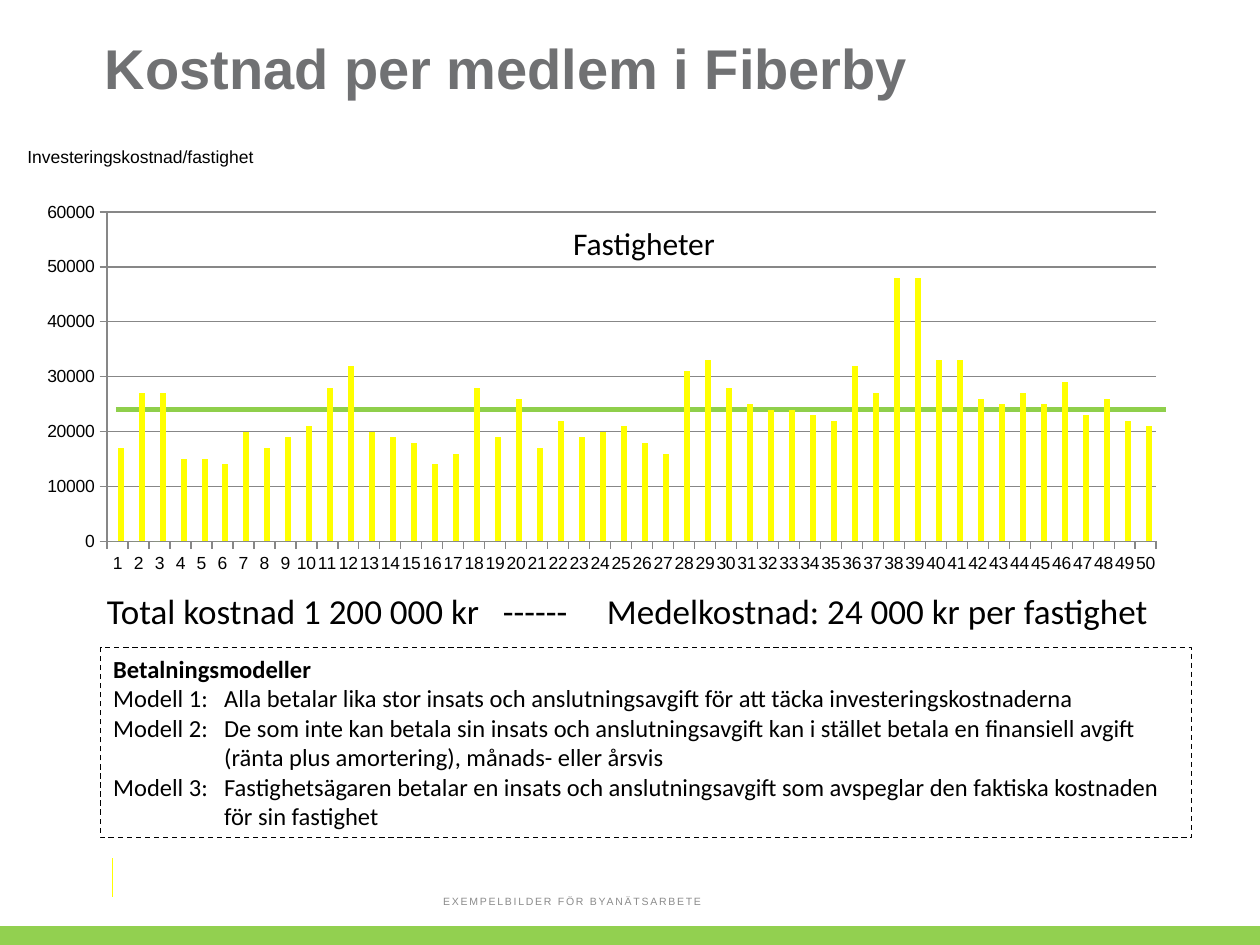
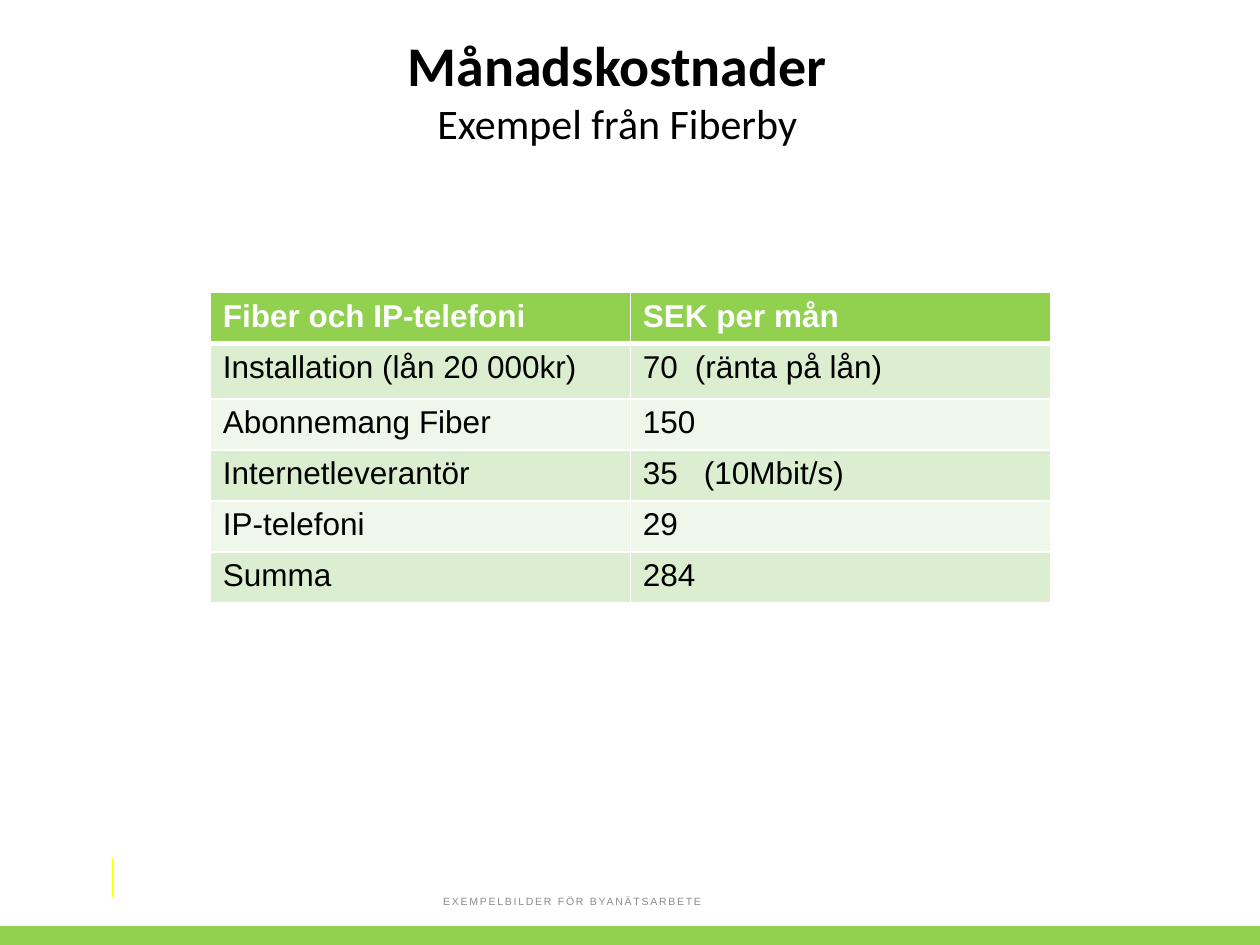
from dataclasses import dataclass

from lxml import etree
from pptx import Presentation
from pptx.chart.data import CategoryChartData
from pptx.dml.color import RGBColor
from pptx.enum.chart import XL_CHART_TYPE, XL_TICK_MARK
from pptx.enum.dml import MSO_LINE
from pptx.enum.shapes import MSO_CONNECTOR, MSO_SHAPE
from pptx.enum.text import MSO_ANCHOR, MSO_AUTO_SIZE, PP_ALIGN
from pptx.oxml import parse_xml
from pptx.oxml.ns import nsdecls, qn
from pptx.util import Pt

STRAIGHT = MSO_CONNECTOR.STRAIGHT
RECTANGLE = MSO_SHAPE.RECTANGLE
COLUMNS = XL_CHART_TYPE.COLUMN_CLUSTERED
TICK_OUTSIDE = XL_TICK_MARK.OUTSIDE
DASH = MSO_LINE.DASH
LEFT, CENTER = PP_ALIGN.LEFT, PP_ALIGN.CENTER
TOP, MIDDLE = MSO_ANCHOR.TOP, MSO_ANCHOR.MIDDLE
NO_AUTOSIZE = MSO_AUTO_SIZE.NONE


@dataclass
class Theme:
    black = RGBColor(0x00, 0x00, 0x00)
    white = RGBColor(0xFF, 0xFF, 0xFF)
    green = RGBColor(0x92, 0xD0, 0x50)
    average_green = RGBColor(0x8F, 0xCF, 0x4B)
    row_dark = RGBColor(0xDC, 0xEE, 0xD0)
    row_light = RGBColor(0xEE, 0xF7, 0xE9)
    yellow = RGBColor(0xFF, 0xFF, 0x00)
    title_gray = RGBColor(0x70, 0x71, 0x73)
    footer_gray = RGBColor(0x8C, 0x8C, 0x8C)
    axis_gray = RGBColor(0x87, 0x87, 0x87)
    sans = "Arial"
    body = "Calibri"
    title_size = Pt(32)
    subtitle_size = Pt(24)
    summary_size = Pt(20)
    table_size = Pt(18)
    model_size = Pt(14)
    label_size = Pt(10)
    footer_size = Pt(6)


theme = Theme()


def add_run(paragraph, text, size, font=theme.body, color=theme.black, bold=False):
    run = paragraph.add_run()
    run.text = text
    run.font.size = size
    run.font.name = font
    run.font.color.rgb = color
    run.font.bold = bold
    return run


def add_tabs(paragraph, *stops):
    tab_list = etree.SubElement(paragraph._p.get_or_add_pPr(), qn("a:tabLst"))
    for stop in stops:
        etree.SubElement(tab_list, qn("a:tab"), pos=str(Pt(stop)), algn="l")


presentation = Presentation()
presentation.slide_width = Pt(720)
presentation.slide_height = Pt(540)
title_only = presentation.slide_layouts[5]
cost_slide = presentation.slides.add_slide(title_only)
monthly_slide = presentation.slides.add_slide(title_only)

average_line = cost_slide.shapes.add_connector(
    STRAIGHT, Pt(66.2), Pt(234), Pt(666), Pt(234))
average_line.line.color.rgb = theme.average_green
average_line.line.width = Pt(3)
connectors = [average_line]

for slide in (cost_slide, monthly_slide):
    marker = slide.shapes.add_connector(
        STRAIGHT, Pt(64), Pt(490.3), Pt(64), Pt(512.6))
    marker.line.color.rgb = theme.yellow
    marker.line.width = Pt(0.5)
    connectors.append(marker)

    band = slide.shapes.add_shape(RECTANGLE, Pt(0), Pt(529.2), Pt(720), Pt(10.8))
    band.shadow.inherit = False
    band.fill.solid()
    band.fill.fore_color.rgb = theme.green
    band.line.fill.background()

    footer = slide.shapes.add_textbox(Pt(246.2), Pt(500.4), Pt(228.2), Pt(28.8))
    footer.text_frame.word_wrap = True
    footer.text_frame.vertical_anchor = MIDDLE
    footer_run = add_run(footer.text_frame.paragraphs[0], "EXEMPELBILDER FÖR BYANÄTSARBETE",
                         theme.footer_size, theme.sans, theme.footer_gray)
    footer_run._r.get_or_add_rPr().set("spc", "100")

    slide.shapes.title.text_frame.auto_size = NO_AUTOSIZE
    slide.shapes.title.text_frame.vertical_anchor = TOP

for connector in connectors:
    etree.SubElement(connector._element.spPr, qn("a:effectLst"))

title = cost_slide.shapes.title
title.left, title.top, title.width, title.height = Pt(52.6), Pt(18), Pt(607.7), Pt(90)
paragraph = title.text_frame.paragraphs[0]
paragraph.alignment = LEFT
paragraph.line_spacing = Pt(36)
add_run(paragraph, "Kostnad per medlem i Fiberby",
        theme.title_size, theme.sans, theme.title_gray, True)

thousand_kronor = [
    17, 27, 27, 15, 15, 14, 20, 17, 19, 21, 28, 32, 20, 19, 18, 14, 16,
    28, 19, 26, 17, 22, 19, 20, 21, 18, 16, 31, 33, 28, 25, 24, 24, 23,
    22, 32, 27, 48, 48, 33, 33, 26, 25, 27, 25, 29, 23, 26, 22, 21,
]
property_count = len(thousand_kronor)
chart_data = CategoryChartData(number_format="General")
chart_data.categories = [str(number + 1) for number in range(property_count)]
chart_data.add_series("Series 1", [0] * property_count)
chart_data.add_series("Series 2", [cost * 1000 for cost in thousand_kronor])
chart = cost_slide.shapes.add_chart(
    COLUMNS, Pt(23.8), Pt(108), Pt(655.9), Pt(231.8), chart_data).chart
chart.has_legend = False
chart.has_title = False
chart.font.size = theme.label_size
chart.font.name = theme.sans
chart.font.color.rgb = theme.black
plot = chart.plots[0]
plot.gap_width = 150
plot.vary_by_categories = False
for series, color in zip(plot.series, (theme.green, theme.yellow)):
    series.format.fill.solid()
    series.format.fill.fore_color.rgb = color

value_axis = chart.value_axis
value_axis.minimum_scale = 0
value_axis.maximum_scale = 60000
value_axis.major_unit = 10000
value_axis.has_major_gridlines = True
category_axis = chart.category_axis
for axis in (value_axis, category_axis):
    axis.major_tick_mark = TICK_OUTSIDE
    axis.tick_labels.font.size = theme.label_size
for line in (value_axis.format.line, category_axis.format.line,
             value_axis.major_gridlines.format.line):
    line.color.rgb = theme.axis_gray
    line.width = Pt(0.75)

category_element = category_axis._element
label_body = category_element.find(qn("c:txPr")).find(qn("a:bodyPr"))
label_body.set("rot", "0")
label_body.set("vert", "horz")
category_element.find(qn("c:noMultiLvlLbl")).addprevious(
    parse_xml(f'<c:tickLblSkip {nsdecls("c")} val="1"/>'))

chart_element = chart._chartSpace.find(qn("c:chart"))
plot_area = chart_element.find(qn("c:plotArea"))
for layout in plot_area.findall(qn("c:layout")):
    plot_area.remove(layout)
plot_area.insert(0, parse_xml(
    f'<c:layout {nsdecls("c")}><c:manualLayout><c:layoutTarget val="inner"/>'
    '<c:xMode val="edge"/><c:yMode val="edge"/><c:x val="0.057"/><c:y val="0.057"/>'
    '<c:w val="0.914"/><c:h val="0.812"/></c:manualLayout></c:layout>'))
no_fill = f'<c:spPr {nsdecls("c", "a")}><a:noFill/><a:ln><a:noFill/></a:ln></c:spPr>'
plot_area.append(parse_xml(no_fill))
chart_element.addnext(parse_xml(no_fill))

chart_labels = [
    ("Total kostnad 1 200 000 kr\t------\tMedelkostnad: 24 000 kr per fastighet",
     54, 333.4, 635, 31.7, theme.summary_size, theme.body, (226.3, 285.7)),
    ("Fastigheter", 320.4, 124.6, 96.5, 28.8, theme.table_size, theme.body, ()),
    ("Investeringskostnad/fastighet", 8.6, 79.9, 164.2, 19.4,
     theme.label_size, theme.sans, ()),
]
for text, left, top, width, height, size, font, stops in chart_labels:
    label = cost_slide.shapes.add_textbox(Pt(left), Pt(top), Pt(width), Pt(height))
    label.text_frame.word_wrap = True
    paragraph = label.text_frame.paragraphs[0]
    if stops:
        add_tabs(paragraph, *stops)
    add_run(paragraph, text, size, font)

model_box = cost_slide.shapes.add_shape(
    RECTANGLE, Pt(57.6), Pt(370.1), Pt(623.5), Pt(108.7))
model_box.shadow.inherit = False
model_box.fill.background()
model_box.line.color.rgb = theme.black
model_box.line.width = Pt(0.75)
model_box.line.dash_style = DASH
model_frame = model_box.text_frame
model_frame.word_wrap = True
model_frame.vertical_anchor = TOP
paragraph = model_frame.paragraphs[0]
paragraph.alignment = LEFT
add_run(paragraph, "Betalningsmodeller", theme.model_size, bold=True)
payment_models = [
    "Alla betalar lika stor insats och anslutningsavgift för att täcka investeringskostnaderna",
    "De som inte kan betala sin insats och anslutningsavgift kan i stället betala "
    "en finansiell avgift (ränta plus amortering), månads- eller årsvis",
    "Fastighetsägaren betalar en insats och anslutningsavgift som avspeglar "
    "den faktiska kostnaden för sin fastighet",
]
for number, description in enumerate(payment_models, 1):
    paragraph = model_frame.add_paragraph()
    paragraph.alignment = LEFT
    properties = paragraph._p.get_or_add_pPr()
    properties.set("marL", str(Pt(63.4)))
    properties.set("indent", str(Pt(-63.4)))
    add_tabs(paragraph, 60.4)
    add_run(paragraph, f"Modell {number}:\t{description}", theme.model_size)

title = monthly_slide.shapes.title
title.left, title.top, title.width, title.height = Pt(224.6), Pt(13.7), Pt(256.3), Pt(74.9)
title.text_frame.word_wrap = False
paragraph = title.text_frame.paragraphs[0]
paragraph.alignment = CENTER
add_run(paragraph, "Månadskostnader", theme.title_size, bold=True)
paragraph = title.text_frame.add_paragraph()
paragraph.alignment = CENTER
add_run(paragraph, "Exempel från Fiberby", theme.subtitle_size)

monthly_costs = [
    ("Fiber och IP-telefoni", "SEK per mån", None),
    ("Installation (lån 20 000kr)", "70\t(ränta på lån)", 29.7),
    ("Abonnemang Fiber", "150", None),
    ("Internetleverantör", "35\t(10Mbit/s)", 34.9),
    ("IP-telefoni", "29", None),
    ("Summa", "284", None),
]
table = monthly_slide.shapes.add_table(
    len(monthly_costs), 2, Pt(120.2), Pt(167), Pt(480), Pt(178)).table
for row_index, (item, cost, stop) in enumerate(monthly_costs):
    is_header = row_index == 0
    table.rows[row_index].height = Pt(31.7 if row_index == 1 else 29.2)
    if is_header:
        fill_color = theme.green
    else:
        fill_color = theme.row_dark if row_index % 2 else theme.row_light
    for column_index, text in enumerate((item, cost)):
        cell = table.cell(row_index, column_index)
        for side in "LRTB":
            is_thick = (row_index, side) in ((0, "B"), (1, "T"))
            cell._tc.get_or_add_tcPr().append(parse_xml(
                f'<a:ln{side} {nsdecls("a")} w="{Pt(3 if is_thick else 1)}"><a:solidFill>'
                f'<a:srgbClr val="{theme.white}"/></a:solidFill></a:ln{side}>'))
        cell.fill.solid()
        cell.fill.fore_color.rgb = fill_color
        paragraph = cell.text_frame.paragraphs[0]
        if stop and column_index == 1:
            add_tabs(paragraph, stop)
        add_run(paragraph, text, theme.table_size, theme.sans,
                theme.white if is_header else theme.black, is_header)

presentation.save("out.pptx")
